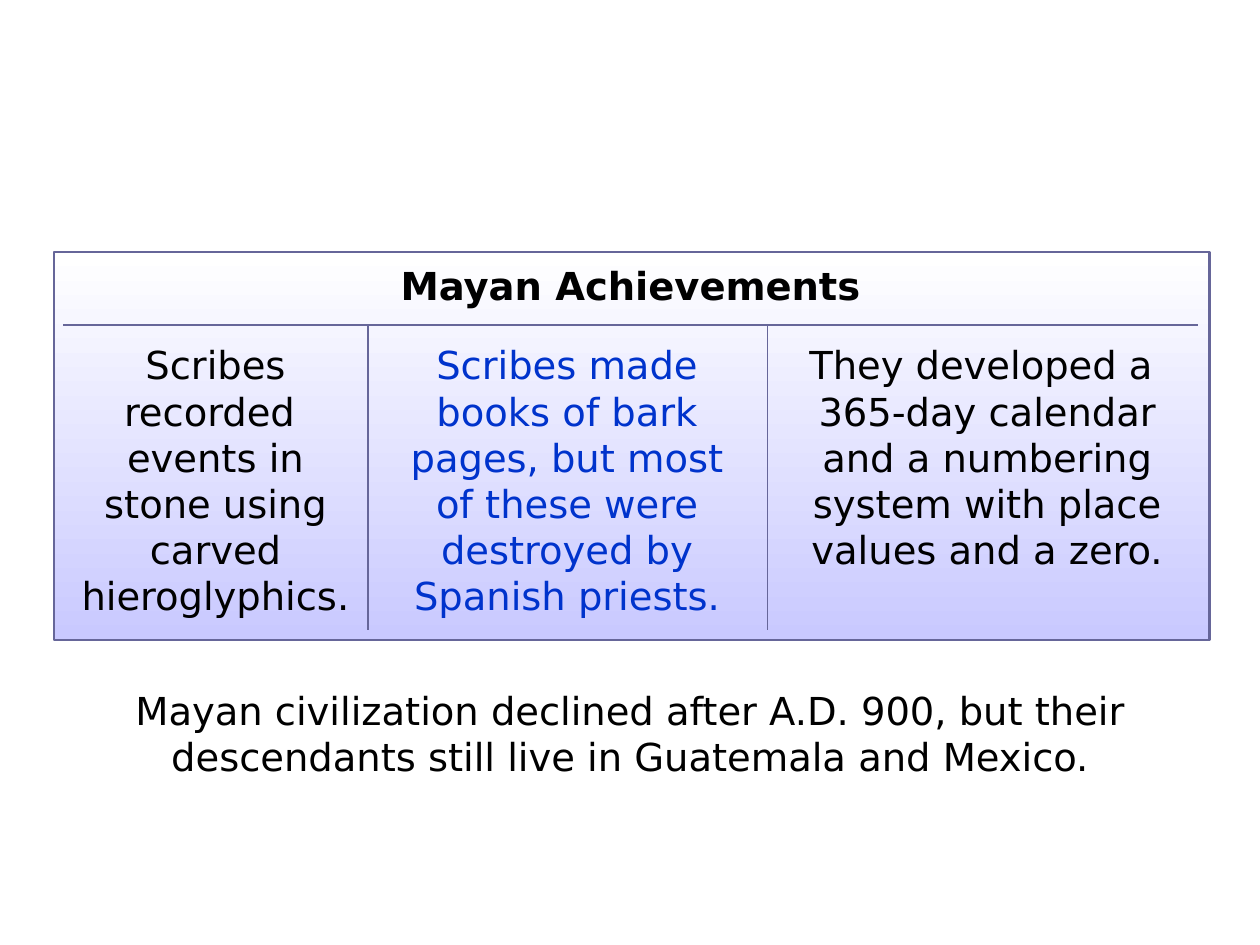
"""Build a slide about Mayan achievements."""
from dataclasses import dataclass

from lxml import etree
from pptx import Presentation
from pptx.dml.color import RGBColor
from pptx.enum.shapes import MSO_SHAPE
from pptx.enum.text import MSO_ANCHOR, PP_ALIGN
from pptx.oxml.ns import qn
from pptx.util import Cm, Pt

RECTANGLE = MSO_SHAPE.RECTANGLE
CENTER = PP_ALIGN.CENTER
MIDDLE = MSO_ANCHOR.MIDDLE
BLACK = RGBColor(0x00, 0x00, 0x00)
BLUE = RGBColor(0x00, 0x33, 0xCC)
WHITE = RGBColor(0xFF, 0xFF, 0xFF)
LAVENDER = RGBColor(0xC9, 0xC9, 0xFF)
SLATE = RGBColor(0x66, 0x66, 0x99)
FONT = "DejaVu Sans"
COLUMN_WIDTHS = (6.15, 8.05, 8.68)
ROW_HEIGHTS = (1.52, 6.15)
SIDES = ("L", "R", "T", "B")


@dataclass(frozen=True)
class TextBlock:
    text: str
    left: float
    top: float
    width: float
    height: float
    color: RGBColor = BLACK


BLOCKS = (
    TextBlock("Mayan civilization declined after A.D. 900, but their "
              "descendants still live in Guatemala and Mexico.",
              1.27, 13.72, 22.86, 2.11),
    TextBlock("Scribes recorded \nevents in stone using carved hieroglyphics.",
              1.27, 6.76, 6.15, 5.89),
    TextBlock("Scribes made books of bark pages, but most of these were "
              "destroyed by Spanish priests.",
              7.62, 6.76, 7.62, 5.89, BLUE),
    TextBlock("They developed a \n365-day calendar and a numbering system "
              "with place values and a zero.",
              15.67, 6.76, 8.46, 4.95),
)


def write_text(frame, text: str, *, color: RGBColor = BLACK,
               bold: bool = False, size: float = 22) -> None:
    frame.word_wrap = True
    para = frame.paragraphs[0]
    para.text = text
    para.alignment = CENTER
    for span in para.runs:
        span.font.name = FONT
        span.font.size = Pt(size)
        span.font.bold = bold
        span.font.color.rgb = color


def add_text_block(page, block: TextBlock) -> None:
    box = page.shapes.add_textbox(Cm(block.left), Cm(block.top),
                                  Cm(block.width), Cm(block.height))
    write_text(box.text_frame, block.text, color=block.color)


def add_panel(page) -> None:
    panel = page.shapes.add_shape(RECTANGLE, Cm(1.09), Cm(5.08),
                                  Cm(23.29), Cm(7.82))
    panel.shadow.inherit = False
    panel.fill.gradient()
    panel.fill.gradient_angle = 270
    for stop, position, color in zip(panel.fill.gradient_stops, (0, 1),
                                     (WHITE, LAVENDER)):
        stop.position = position
        stop.color.rgb = color
    panel.line.color.rgb = SLATE
    panel.line.width = Pt(1.5)


def set_borders(cell, visible: str) -> None:
    properties = cell._tc.get_or_add_tcPr()
    for side in SIDES:
        line = etree.SubElement(properties, qn(f"a:ln{side}"), w=str(Pt(1)))
        if side in visible:
            fill = etree.SubElement(line, qn("a:solidFill"))
            etree.SubElement(fill, qn("a:srgbClr"), val=str(SLATE))
        else:
            etree.SubElement(line, qn("a:noFill"))


def add_grid(page) -> None:
    table = page.shapes.add_table(
        len(ROW_HEIGHTS), len(COLUMN_WIDTHS), Cm(1.27), Cm(5.03),
        Cm(sum(COLUMN_WIDTHS)), Cm(sum(ROW_HEIGHTS))).table
    table.first_row = False
    table.horz_banding = False
    for column, width in zip(table.columns, COLUMN_WIDTHS):
        column.width = Cm(width)
    for row, height in zip(table.rows, ROW_HEIGHTS):
        row.height = Cm(height)
    for row, borders in enumerate((("B", "B", "B"), ("TR", "LTR", "LT"))):
        for column, visible in enumerate(borders):
            cell = table.cell(row, column)
            set_borders(cell, visible)
            cell.fill.background()
    header = table.cell(0, 0)
    header.merge(table.cell(0, len(COLUMN_WIDTHS) - 1))
    header.vertical_anchor = MIDDLE
    write_text(header.text_frame, "Mayan Achievements", bold=True)


def main() -> None:
    deck = Presentation()
    deck.slide_width = Cm(25.4)
    deck.slide_height = Cm(19.05)
    page = deck.slides.add_slide(deck.slide_layouts[6])
    conclusion, *achievements = BLOCKS
    add_text_block(page, conclusion)
    add_panel(page)
    add_grid(page)
    for achievement in achievements:
        add_text_block(page, achievement)
    deck.save("out.pptx")


if __name__ == "__main__":
    main()
